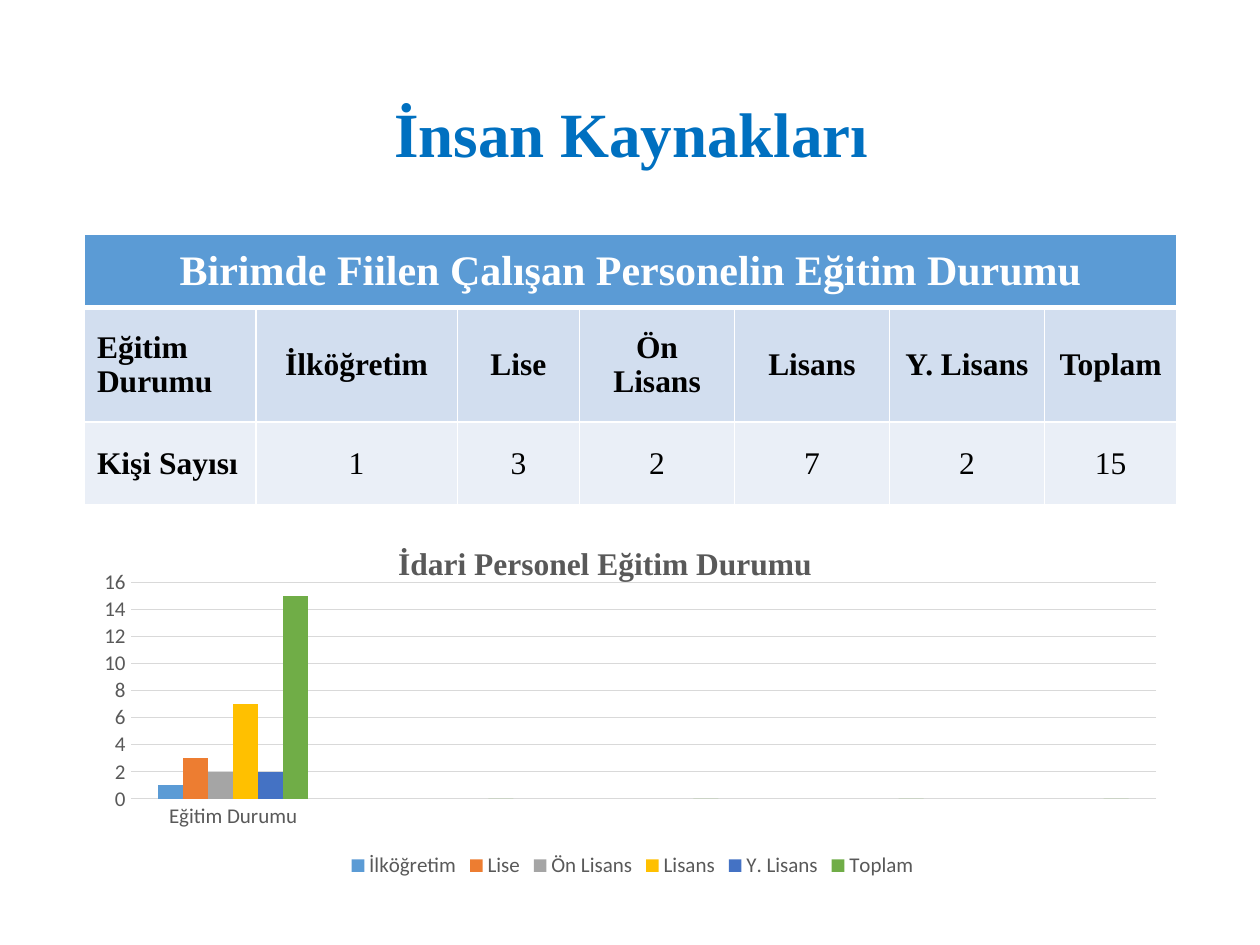
import pptx
import pptx.chart.data
import pptx.dml.color
import pptx.enum.chart
import pptx.enum.text
import pptx.oxml
import pptx.oxml.ns
import pptx.util
from lxml import etree

Inches, Pt = pptx.util.Inches, pptx.util.Pt
ALIGN = pptx.enum.text.PP_ALIGN
MIDDLE = pptx.enum.text.MSO_ANCHOR.MIDDLE
SERIF, SANS = "Times New Roman", "Calibri"
GREY, GRID = "595959", "D9D9D9"

# Content
HEADING = "İnsan Kaynakları"
TABLE_TITLE = "Birimde Fiilen Çalışan Personelin Eğitim Durumu"
CHART_TITLE = "İdari Personel Eğitim Durumu"
ROW_LABELS = ("Eğitim Durumu", "Kişi Sayısı")
LEVELS = [  # level, people, bar colour
    ("İlköğretim", 1, "5B9BD5"),
    ("Lise", 3, "ED7D31"),
    ("Ön Lisans", 2, "A5A5A5"),
    ("Lisans", 7, "FFC000"),
    ("Y. Lisans", 2, "4472C4"),
    ("Toplam", 15, "70AD47"),
]
EMPTY_CATEGORIES = 4
COLUMN_WIDTHS = (1.36, 1.6, 0.97, 1.23, 1.23, 1.23, 1.05)
ROW_HEIGHTS = (0.58, 0.91, 0.66)
ROW_FILLS = ("5B9BD5", "D2DEEF", "EAEFF7")


def rgb(value):
    return pptx.dml.color.RGBColor.from_string(value)


def style(font, size, color, name=SERIF, bold=False):
    font.size, font.name, font.bold = Pt(size), name, bold
    font.color.rgb = rgb(color)


def write(frame, text, align=ALIGN.CENTER, spacing=None, **font):
    paragraph = frame.paragraphs[0]
    paragraph.alignment = align
    paragraph.line_spacing = spacing
    run = paragraph.add_run()
    run.text = text
    style(run.font, **font)


def paint_cell(cell, fill, top, bottom):
    """Set white borders (points) and a solid fill."""
    properties = cell._tc.get_or_add_tcPr()
    for side, width in (("L", 1), ("R", 1), ("T", top), ("B", bottom)):
        properties.append(pptx.oxml.parse_xml(
            f'<a:ln{side} {pptx.oxml.ns.nsdecls("a")} w="{Pt(width)}"><a:solidFill>'
            f'<a:srgbClr val="FFFFFF"/></a:solidFill></a:ln{side}>'))
    cell.fill.solid()
    cell.fill.fore_color.rgb = rgb(fill)
    cell.vertical_anchor = MIDDLE


def place(parent, x, y, w=None, h=None):
    """Give a chart title or plot area a manual layout in chart fractions."""
    c = pptx.oxml.ns.qn
    for old in parent.findall(c("c:layout")):
        parent.remove(old)
    layout = etree.Element(c("c:layout"))
    manual = etree.SubElement(layout, c("c:manualLayout"))
    values = [("xMode", "edge"), ("yMode", "edge"), ("x", x), ("y", y)]
    if w:
        values = [("layoutTarget", "inner")] + values + [("w", w), ("h", h)]
    for tag, value in values:
        etree.SubElement(manual, c(f"c:{tag}")).set("val", str(value))
    text = parent.find(c("c:tx"))
    parent.insert(0 if text is None else 1, layout)


deck = pptx.Presentation()
deck.slide_width, deck.slide_height = Inches(10), Inches(7.5)
slide = deck.slides.add_slide(deck.slide_layouts[6])

# Heading, set in the lower part of its box
heading = slide.shapes.add_textbox(
    Inches(0.51), Inches(0.36), Inches(9), Inches(0.94)).text_frame
heading.word_wrap = True
heading.vertical_anchor = MIDDLE
heading.margin_top, heading.margin_bottom = Inches(0.52), 0
write(heading, HEADING, spacing=0.9, size=36, color="0070C0", bold=True)

# Staff table
staff = slide.shapes.add_table(
    3, len(COLUMN_WIDTHS), Inches(0.67), Inches(1.86),
    Inches(sum(COLUMN_WIDTHS)), Inches(sum(ROW_HEIGHTS))).table
for column, width in zip(staff.columns, COLUMN_WIDTHS):
    column.width = Inches(width)
for row, height in zip(staff.rows, ROW_HEIGHTS):
    row.height = Inches(height)
for r, fill in enumerate(ROW_FILLS):
    for cell in staff.rows[r].cells:
        paint_cell(cell, fill, top=3 if r == 1 else 1, bottom=3 if r == 0 else 1)
staff.cell(0, 0).merge(staff.cell(0, len(LEVELS)))
write(staff.cell(0, 0).text_frame, TABLE_TITLE, size=24, color="FFFFFF", bold=True)
for r, label in enumerate(ROW_LABELS, 1):
    write(staff.cell(r, 0).text_frame, label, align=ALIGN.LEFT,
          size=18, color="000000", bold=True)
    for col, level in enumerate(LEVELS, 1):
        write(staff.cell(r, col).text_frame, str(level[r - 1]),
              size=18, color="000000", bold=r == 1)

# Column chart: only the first category is filled
data = pptx.chart.data.CategoryChartData()
data.categories = [ROW_LABELS[0]] + [""] * EMPTY_CATEGORIES
for name, people, _ in LEVELS:
    rest = 0 if name == "Toplam" else None
    data.add_series(name, [people] + [rest] * EMPTY_CATEGORIES)
chart = slide.shapes.add_chart(
    pptx.enum.chart.XL_CHART_TYPE.COLUMN_CLUSTERED,
    Inches(0.69), Inches(4.1), Inches(8.66), Inches(2.91), data).chart
style(chart.font, 10, "000000", SANS)

chart.has_title = True
write(chart.chart_title.text_frame, CHART_TITLE, size=18, color=GREY, bold=True)
chart.chart_title.include_in_layout = False
place(chart.chart_title._element, 0.28, 0.06)
place(chart._chartSpace.chart.plotArea, 0.04, 0.18, 0.94, 0.59)

plot = chart.plots[0]
plot.gap_width, plot.overlap, plot.vary_by_categories = 219, 0, False
for series, (_, _, color) in zip(plot.series, LEVELS):
    series.format.fill.solid()
    series.format.fill.fore_color.rgb = rgb(color)

# Axes and legend
values, categories = chart.value_axis, chart.category_axis
for axis in (values, categories):
    axis.major_tick_mark = pptx.enum.chart.XL_TICK_MARK.NONE
    style(axis.tick_labels.font, 12, GREY, SANS)
values.minimum_scale, values.maximum_scale, values.major_unit = 0, 16, 2
values.format.line.fill.background()
values.has_major_gridlines = True
for line in (values.major_gridlines.format.line, categories.format.line):
    line.color.rgb = rgb(GRID)
    line.width = Pt(0.75)
chart.has_legend = True
chart.legend.position = pptx.enum.chart.XL_LEGEND_POSITION.BOTTOM
chart.legend.include_in_layout = False
style(chart.legend.font, 12, GREY, SANS)

deck.save("out.pptx")
